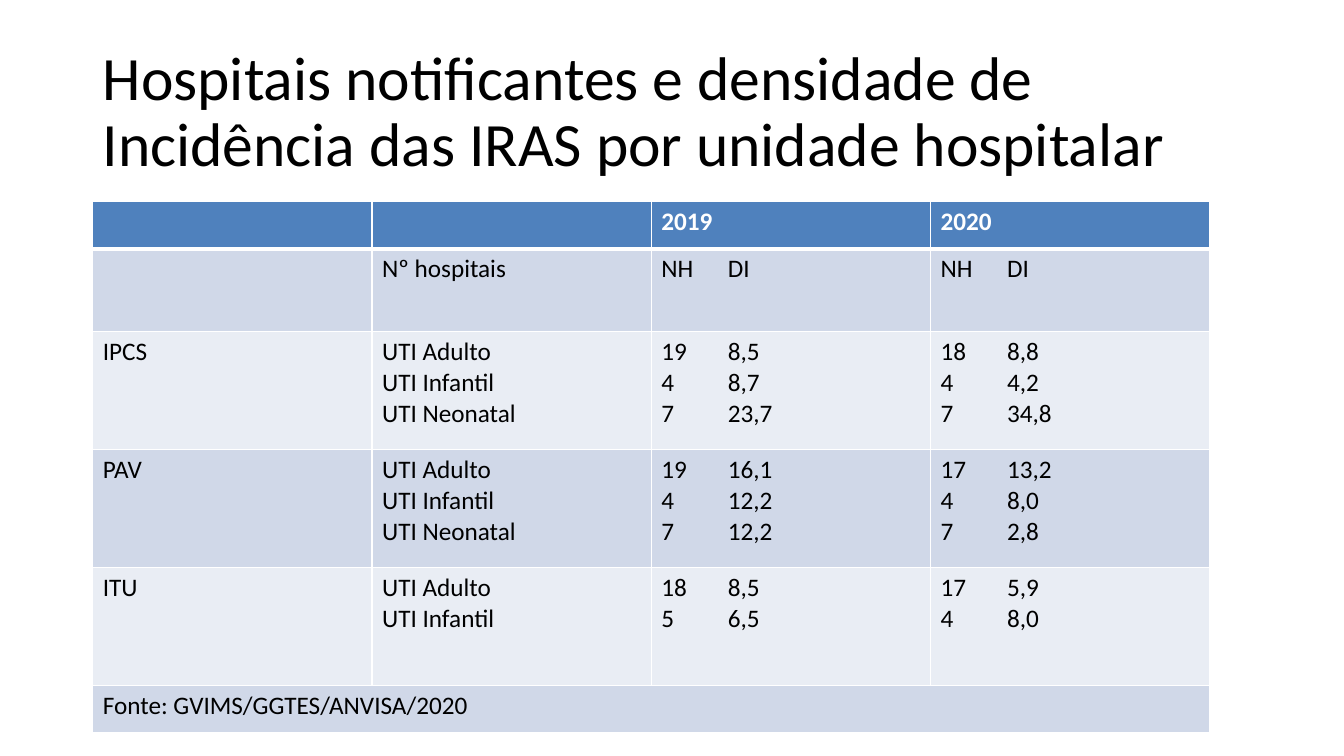
"""Build the slide on reporting hospitals and infection incidence density."""
from lxml.etree import SubElement
from pptx import Presentation
from pptx.dml.color import RGBColor
from pptx.enum.text import MSO_ANCHOR
from pptx.oxml import parse_xml
from pptx.oxml.ns import nsdecls, qn
from pptx.util import Inches, Pt

TITLE = "Hospitais notificantes e densidade de Incidência das IRAS por unidade hospitalar"
UNITS = ("UTI Adulto", "UTI Infantil", "UTI Neonatal")
YEARS = ("2019", "2020")
MEASURES = ("NH", "DI")
SOURCE = "Fonte: GVIMS/GGTES/ANVISA/2020"
INFECTIONS = {
    "IPCS": ([("19", "8,5"), ("4", "8,7"), ("7", "23,7")],
             [("18", "8,8"), ("4", "4,2"), ("7", "34,8")]),
    "PAV": ([("19", "16,1"), ("4", "12,2"), ("7", "12,2")],
            [("17", "13,2"), ("4", "8,0"), ("7", "2,8")]),
    "ITU": ([("18", "8,5"), ("5", "6,5")],
            [("17", "5,9"), ("4", "8,0")]),
}

BLACK = RGBColor(0x00, 0x00, 0x00)
WHITE = RGBColor(0xFF, 0xFF, 0xFF)
HEADER_BLUE = RGBColor(0x4F, 0x81, 0xBD)
BANDS = (RGBColor(0xD0, 0xD8, 0xE8), RGBColor(0xE9, 0xED, 0xF4))
FONT = "Calibri"
LEFT, TABLE_TOP = 0.92, 2
COLUMN_WIDTH = 2.77
ROW_HEIGHTS = (0.47, 0.82, 1.17, 1.17, 1.17, 0.47)
DENSITY_TAB = 0.66


def table_rows():
    measures = "\t".join(MEASURES)
    rows = [["", "", *YEARS], ["", "Nº hospitais", measures, measures]]
    for infection, years in INFECTIONS.items():
        units = "\n".join(UNITS[:len(years[0])])
        figures = ["\n".join("\t".join(pair) for pair in year) for year in years]
        rows.append([infection, units, *figures])
    return rows + [[SOURCE, "", "", ""]]


def set_font(paragraph, size, color, bold=False):
    font = paragraph.font
    font.name, font.size, font.bold = FONT, Pt(size), bold
    font.color.rgb = color


def add_tab(paragraph):
    tabs = SubElement(paragraph._p.get_or_add_pPr(), qn("a:tabLst"))
    SubElement(tabs, qn("a:tab"), pos=str(Inches(DENSITY_TAB)), algn="l")


def set_borders(cell, top, bottom):
    widths = (("L", 1), ("R", 1), ("T", top), ("B", bottom))
    for index, (side, width) in enumerate(widths):
        line = parse_xml(
            f'<a:ln{side} {nsdecls("a")} w="{Pt(width)}"><a:solidFill>'
            f'<a:srgbClr val="{WHITE}"/></a:solidFill></a:ln{side}>')
        cell._tc.get_or_add_tcPr().insert(index, line)


def add_title(slide):
    box = slide.shapes.add_textbox(Inches(LEFT), Inches(0.4), Inches(11.5), Inches(1.45))
    frame = box.text_frame
    frame.word_wrap = True
    frame.vertical_anchor = MSO_ANCHOR.MIDDLE
    frame.text = TITLE
    paragraph = frame.paragraphs[0]
    paragraph.line_spacing = 0.9
    set_font(paragraph, 44, BLACK)


def add_infection_table(slide):
    rows = table_rows()
    columns = len(rows[0])
    table = slide.shapes.add_table(
        len(rows), columns, Inches(LEFT), Inches(TABLE_TOP),
        Inches(COLUMN_WIDTH * columns), Inches(sum(ROW_HEIGHTS))).table
    table.horz_banding = False
    for column in table.columns:
        column.width = Inches(COLUMN_WIDTH)
    for r, texts in enumerate(rows):
        header = r == 0
        table.rows[r].height = Inches(ROW_HEIGHTS[r])
        for c, text in enumerate(texts):
            cell = table.cell(r, c)
            cell.text = text
            cell.fill.solid()
            cell.fill.fore_color.rgb = HEADER_BLUE if header else BANDS[(r - 1) % 2]
            set_borders(cell, top=3 if r == 1 else 1, bottom=3 if header else 1)
            for paragraph in cell.text_frame.paragraphs:
                if "\t" in text:
                    add_tab(paragraph)
                set_font(paragraph, 18, WHITE if header else BLACK, header)
    last = len(rows) - 1
    table.cell(last, 0).merge(table.cell(last, columns - 1))


def main():
    presentation = Presentation()
    presentation.slide_width = Inches(13.33)
    presentation.slide_height = Inches(7.5)
    slide = presentation.slides.add_slide(presentation.slide_layouts[6])
    add_title(slide)
    add_infection_table(slide)
    presentation.save("out.pptx")


if __name__ == "__main__":
    main()
